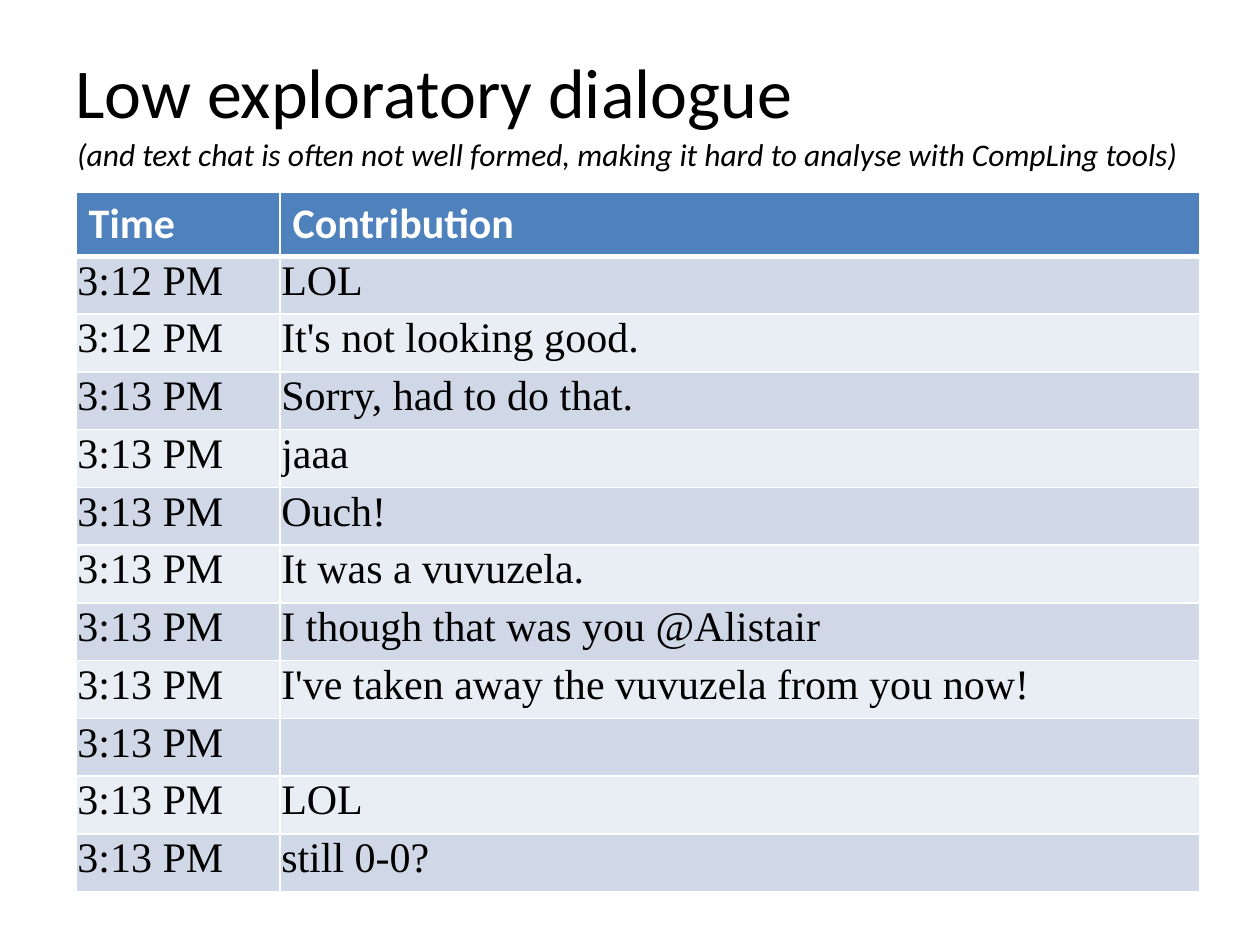
"""Build the slide on low exploratory dialogue in text chat."""
import dataclasses
import pptx
import pptx.dml.color
import pptx.enum.text
import pptx.oxml
import pptx.oxml.ns
import pptx.util

Pt = pptx.util.Pt


@dataclasses.dataclass(frozen=True)
class Theme:
    sans: str = "Calibri"
    serif: str = "Times New Roman"
    ink: str = "000000"
    white: str = "FFFFFF"
    head: str = "4F81BD"
    bands: tuple = ("D0D8E8", "E9EDF4")
    title: int = 40
    note: int = 18
    body: int = 24
    thin: int = 1
    thick: int = 3


class Deck:
    def __init__(self, theme, wide, high):
        self.theme = theme
        self.show = pptx.Presentation()
        self.show.slide_width, self.show.slide_height = Pt(wide), Pt(high)
        self.slide = self.show.slides.add_slide(self.show.slide_layouts[6])

    def run(self, para, text, size, face, color, bold=False, italic=False):
        run = para.add_run()
        run.text = text
        font = run.font
        font.size, font.name = Pt(size), face
        font.bold, font.italic = bold, italic
        font.color.rgb = pptx.dml.color.RGBColor.from_string(color)

    def text(self, box, words, size, anchor, italic=False):
        frame = self.slide.shapes.add_textbox(*map(Pt, box)).text_frame
        frame.word_wrap = True
        frame.vertical_anchor = anchor
        self.run(frame.paragraphs[0], words, size, self.theme.sans,
                 self.theme.ink, italic=italic)

    def edge(self, cell, side, width):
        line = pptx.oxml.parse_xml(
            f'<a:ln{side} {pptx.oxml.ns.nsdecls("a")} w="{Pt(width)}">'
            f'<a:solidFill><a:srgbClr val="{self.theme.white}"/></a:solidFill>'
            f'</a:ln{side}>')
        cell._tc.get_or_add_tcPr().append(line)

    def cell(self, cell, words, row):
        theme = self.theme
        head = row == 0
        heavy = {0: "B", 1: "T"}.get(row)
        for side in "LRTB":
            self.edge(cell, side, theme.thick if side == heavy else theme.thin)
        fill = theme.head if head else theme.bands[(row - 1) % 2]
        cell.fill.solid()
        cell.fill.fore_color.rgb = pptx.dml.color.RGBColor.from_string(fill)
        if not words:
            return
        if not head:
            cell.margin_left = cell.margin_right = cell.margin_top = Pt(0.75)
            cell.margin_bottom = 0
        self.run(cell.text_frame.paragraphs[0], words, theme.body,
                 theme.sans if head else theme.serif,
                 theme.white if head else theme.ink, bold=head)

    def table(self, left, top, cols, head, high, rows):
        total = head + high * (len(rows) - 1)
        grid = self.slide.shapes.add_table(
            len(rows), len(cols), Pt(left), Pt(top), Pt(sum(cols)), Pt(total)).table
        for col, width in zip(grid.columns, cols):
            col.width = Pt(width)
        for row, line in enumerate(rows):
            grid.rows[row].height = Pt(high if row else head)
            for col, words in enumerate(line):
                self.cell(grid.cell(row, col), words, row)


def main():
    theme = Theme()
    anchor = pptx.enum.text.MSO_ANCHOR
    deck = Deck(theme, 720, 540)
    early = ["LOL", "It's not looking good."]
    late = ["Sorry, had to do that.", "jaaa", "Ouch!", "It was a vuvuzela.",
            "I though that was you @Alistair",
            "I've taken away the vuvuzela from you now!",
            "", "LOL", "still 0-0?"]
    rows = [("Time", "Contribution")]
    rows += [("3:12 PM", words) for words in early]
    rows += [("3:13 PM", words) for words in late]
    deck.table(43.5, 110, (116.5, 525.5), 20, 33, rows)
    deck.text((36, 21.6, 648, 60.5), "Low exploratory dialogue",
              theme.title, anchor.MIDDLE)
    deck.text((37, 73.5, 669, 29),
              "(and text chat is often not well formed, making it hard to "
              "analyse with CompLing tools)",
              theme.note, anchor.TOP, italic=True)
    deck.show.save("out.pptx")


if __name__ == "__main__":
    main()
